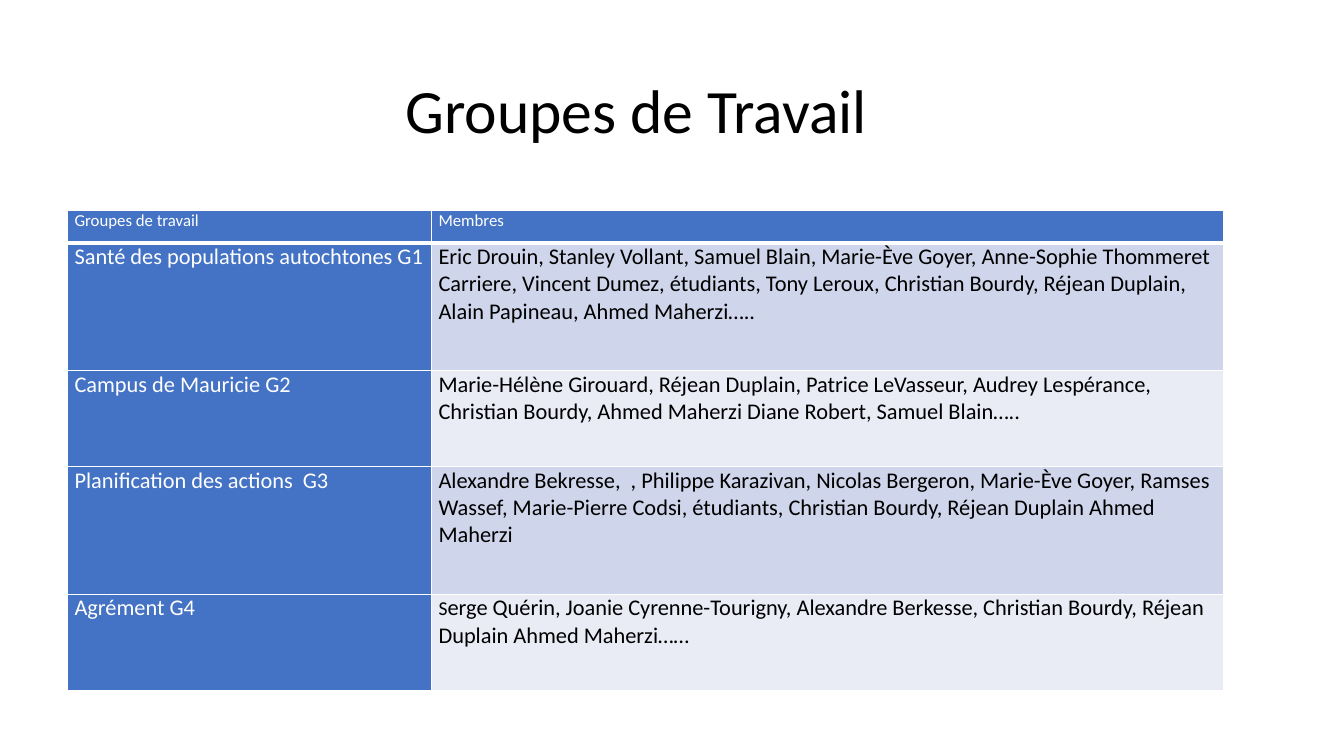
from pptx import Presentation
from pptx.dml.color import RGBColor
from pptx.enum.text import MSO_ANCHOR, MSO_AUTO_SIZE, PP_ALIGN
from pptx.oxml.ns import qn
from pptx.util import Inches, Pt
from lxml.etree import SubElement

FONT = "Calibri"
BLACK = RGBColor(0, 0, 0)
WHITE = RGBColor(0xFF, 0xFF, 0xFF)
BLUE = RGBColor(0x44, 0x72, 0xC4)
BANDS = [RGBColor(0xCF, 0xD5, 0xEA), RGBColor(0xE9, 0xEB, 0xF5)]

COLS = [3.61, 7.86]
HEAD = ["Groupes de travail", "Membres"]
HEAD_H = 0.32
# Each group: name, members (one string per run), row height
GROUPS = [
    ("Santé des populations autochtones G1",
     ["Eric Drouin, Stanley Vollant, Samuel Blain, Marie-Ève Goyer, "
      "Anne-Sophie Thommeret Carriere, Vincent Dumez, étudiants, Tony Leroux, "
      "Christian Bourdy, Réjean Duplain, Alain Papineau, Ahmed Maherzi….."], 1.27),
    ("Campus de Mauricie G2",
     ["Marie-Hélène Girouard, Réjean Duplain, Patrice LeVasseur, Audrey Lespérance, "
      "Christian Bourdy, Ahmed Maherzi Diane Robert, Samuel Blain….."], 0.95),
    ("Planification des actions  G3",
     ["Alexandre Bekresse,  , Philippe Karazivan, Nicolas Bergeron, Marie-Ève Goyer, "
      "Ramses Wassef, Marie-Pierre Codsi, étudiants, Christian Bourdy, "
      "Réjean Duplain Ahmed Maherzi"], 1.27),
    ("Agrément G4",
     ["S", "erge Quérin, Joanie Cyrenne-Tourigny, Alexandre Berkesse, "
      "Christian Bourdy, Réjean Duplain Ahmed Maherzi……"], 0.95),
]


def style(run, size, color):
    run.font.name = FONT
    run.font.size = Pt(size)
    run.font.bold = False
    run.font.color.rgb = color


def add_title(slide, text):
    title = slide.shapes.title
    title.left, title.top = Inches(0.92), Inches(0.4)
    title.width, title.height = Inches(11.5), Inches(1.45)
    frame = title.text_frame
    frame.text = text
    frame.word_wrap = True
    frame.auto_size = MSO_AUTO_SIZE.NONE
    frame.vertical_anchor = MSO_ANCHOR.MIDDLE
    frame.margin_left = Inches(3.1)
    para = frame.paragraphs[0]
    para.alignment = PP_ALIGN.LEFT
    para.line_spacing = 0.9
    style(para.runs[0], 44, BLACK)


def add_edges(cell, bottom):
    props = cell._tc.get_or_add_tcPr()
    for side, width in (("L", 1), ("R", 1), ("T", 1), ("B", bottom)):
        line = SubElement(props, qn(f"a:ln{side}"), w=str(Pt(width)))
        fill = SubElement(line, qn("a:solidFill"))
        SubElement(fill, qn("a:srgbClr"), val=str(WHITE))


def fill_cell(cell, parts, sizes, color, back, align=PP_ALIGN.LEFT, bottom=1):
    add_edges(cell, bottom)
    cell.fill.solid()
    cell.fill.fore_color.rgb = back
    cell.margin_left = cell.margin_right = Inches(0.07)
    cell.margin_top = cell.margin_bottom = 0
    para = cell.text_frame.paragraphs[0]
    para.alignment = align
    for part, size in zip(parts, sizes):
        run = para.add_run()
        run.text = part
        style(run, size, color)


def add_groups(slide):
    heights = [HEAD_H] + [group[2] for group in GROUPS]
    table = slide.shapes.add_table(
        len(heights), len(COLS), Inches(0.67), Inches(2.09),
        Inches(sum(COLS)), Inches(sum(heights))).table
    for col, width in zip(table.columns, COLS):
        col.width = Inches(width)
    for row, height in zip(table.rows, heights):
        row.height = Inches(height)

    # Header row
    for col, text in enumerate(HEAD):
        fill_cell(table.cell(0, col), [text], [12], WHITE, BLUE,
                  PP_ALIGN.JUSTIFY, 3)

    # One row per group, in alternating bands
    for row, (name, parts, _) in enumerate(GROUPS, 1):
        sizes = [14 if len(part) == 1 else 16 for part in parts]
        fill_cell(table.cell(row, 0), [name], [16], WHITE, BLUE)
        fill_cell(table.cell(row, 1), parts, sizes, BLACK, BANDS[(row - 1) % 2])


def main():
    deck = Presentation()
    deck.slide_width, deck.slide_height = Inches(13.33), Inches(7.5)
    slide = deck.slides.add_slide(deck.slide_layouts[5])
    add_title(slide, "Groupes de Travail")
    add_groups(slide)
    deck.save("out.pptx")


if __name__ == "__main__":
    main()
